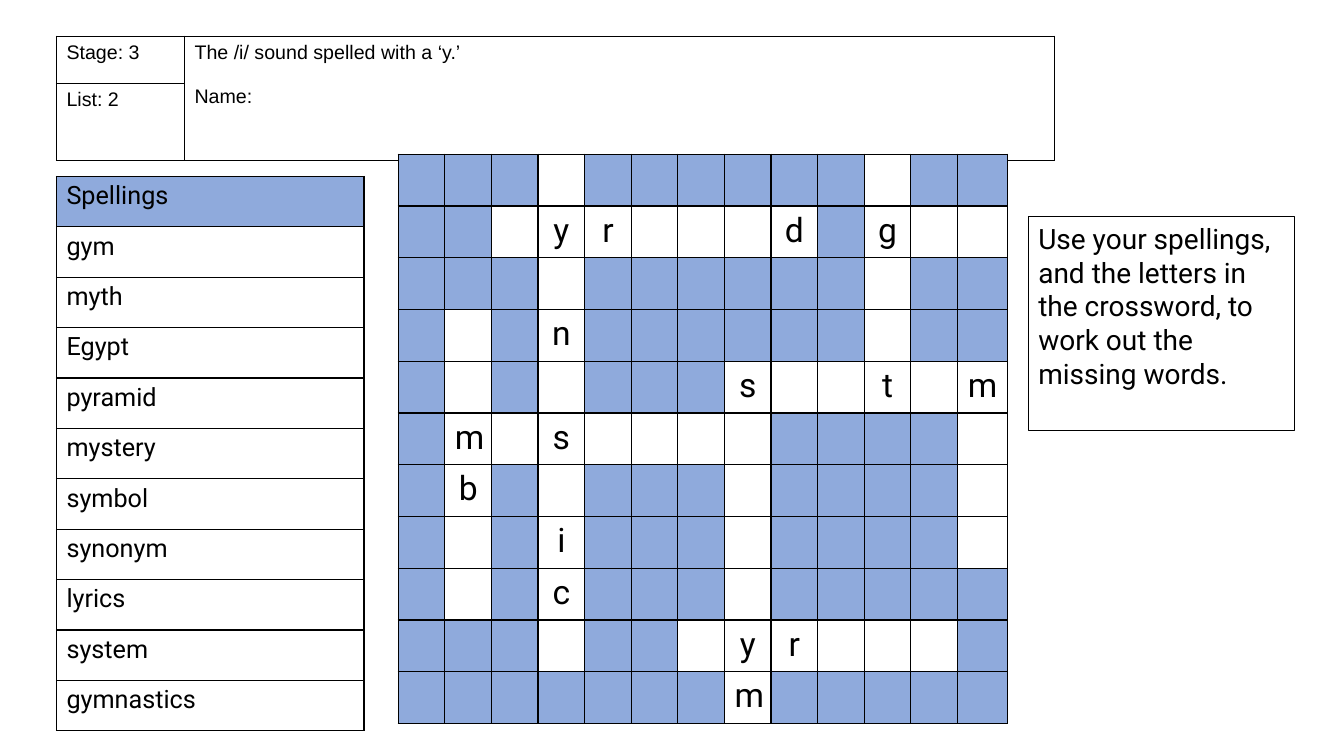
from dataclasses import dataclass

from lxml.etree import SubElement
from pptx import Presentation
from pptx.dml.color import RGBColor
from pptx.enum.text import MSO_ANCHOR, PP_ALIGN
from pptx.oxml.ns import qn
from pptx.util import Inches, Pt

GRID = 0.1  # inches per grid column and grid row


@dataclass(frozen=True)
class Theme:
    ink: str = "000000"
    blue: str = "8FAADC"
    white: str = "FFFFFF"
    header_font: str = "Arial"
    body_font: str = "Roboto"
    header_size: int = 14
    list_size: int = 18
    note_size: int = 20
    letter_size: int = 24
    table_line: float = 1
    note_line: float = 0.75


@dataclass(frozen=True)
class Box:
    """Left, top, width and height in grid columns and rows."""
    left: float
    top: float
    width: float
    height: float

    def lengths(self):
        return [units(n) for n in (self.left, self.top, self.width, self.height)]


THEME = Theme()
SPELLINGS = ["gym", "myth", "Egypt", "pyramid", "mystery", "symbol",
             "synonym", "lyrics", "system", "gymnastics"]
BLOCKED, OPEN = "#", "."
CROSSWORD = """
###.######.##
##.yr...d#g..
###.######.##
#.#n######.##
#.#.###s..t.m
#m.s....####.
#b#.###.####.
#.#i###.####.
#.#c###.#####
###.##.yr...#
#######m#####
""".split()


def units(count):
    return Inches(count * GRID)


def write(para, text, size, font=THEME.body_font, align=PP_ALIGN.LEFT):
    para.alignment = align
    span = para.add_run()
    span.text = text
    for name, value in {"name": font, "size": Pt(size), "bold": False}.items():
        setattr(span.font, name, value)
    span.font.color.rgb = RGBColor.from_string(THEME.ink)


def rule_cell(cell):
    """Draw all four borders of a cell; call before filling it."""
    properties = cell._tc.get_or_add_tcPr()
    for side in ("lnL", "lnR", "lnT", "lnB"):
        line = SubElement(properties, qn(f"a:{side}"), w=str(Pt(THEME.table_line)))
        fill = SubElement(line, qn("a:solidFill"))
        SubElement(fill, qn("a:srgbClr"), val=THEME.ink)


def fill_cell(cell, colour):
    cell.fill.solid()
    cell.fill.fore_color.rgb = RGBColor.from_string(colour)


def add_ruled_table(page, box, widths, heights):
    """Add an unfilled table with black borders and the given grid sizes."""
    table = page.shapes.add_table(len(heights), len(widths), *box.lengths()).table
    for flag in ("first_row", "horz_banding"):
        setattr(table, flag, False)
    for column, width in zip(table.columns, widths):
        column.width = units(width)
    for row, height in zip(table.rows, heights):
        row.height = units(height)
    for cell in table.iter_cells():
        rule_cell(cell)
        cell.fill.background()
    return table


def add_spellings(page, box):
    words = ["Spellings", *SPELLINGS]
    table = add_ruled_table(page, box, [box.width], [box.height / len(words)] * len(words))
    for cell, word in zip(table.iter_cells(), words):
        write(cell.text_frame.paragraphs[0], word, THEME.list_size)
    fill_cell(table.cell(0, 0), THEME.blue)


def add_header(page, box):
    label_width, stage_height = 12.7, 4.7
    table = add_ruled_table(page, box, [label_width, box.width - label_width],
                            [stage_height, box.height - stage_height])
    table.cell(0, 1).merge(table.cell(1, 1))
    style = {"size": THEME.header_size, "font": THEME.header_font}
    for row, label in enumerate(["Stage: 3", "List: 2"]):
        write(table.cell(row, 0).text_frame.paragraphs[0], label, **style)
    frame = table.cell(0, 1).text_frame
    write(frame.paragraphs[0], "The /i/ sound spelled with a ‘y.’", **style)
    name_para = frame.add_paragraph()
    name_para.space_before = Pt(16)
    write(name_para, "Name:", **style)


def add_crossword(page, box):
    columns, rows = len(CROSSWORD[0]), len(CROSSWORD)
    last_width = 5
    widths = [(box.width - last_width) / (columns - 1)] * (columns - 1) + [last_width]
    table = add_ruled_table(page, box, widths, [box.height / rows] * rows)
    for cell, mark in zip(table.iter_cells(), "".join(CROSSWORD)):
        fill_cell(cell, THEME.blue if mark == BLOCKED else THEME.white)
        if mark not in (BLOCKED, OPEN):
            write(cell.text_frame.paragraphs[0], mark, THEME.letter_size,
                  align=PP_ALIGN.CENTER)


def add_instructions(page, box):
    note = page.shapes.add_textbox(*box.lengths())
    note.line.color.rgb = RGBColor.from_string(THEME.ink)
    note.line.width = Pt(THEME.note_line)
    frame = note.text_frame
    for name, value in {"word_wrap": True, "vertical_anchor": MSO_ANCHOR.TOP}.items():
        setattr(frame, name, value)
    write(frame.paragraphs[0], "Use your spellings, and the letters in the crossword, "
          "to work out the missing words.", THEME.note_size)


def main():
    deck = Presentation()
    deck.slide_width, deck.slide_height = Inches(13.33), Inches(7.5)
    page = deck.slides.add_slide(deck.slide_layouts[6])
    add_spellings(page, Box(5.6, 17.5, 30.5, 55))
    add_header(page, Box(5.6, 3.6, 99, 12.3))
    add_crossword(page, Box(39.5, 15.3, 60.5, 56.5))
    add_instructions(page, Box(102, 21.5, 26.4, 21.2))
    deck.save("out.pptx")


if __name__ == "__main__":
    main()
